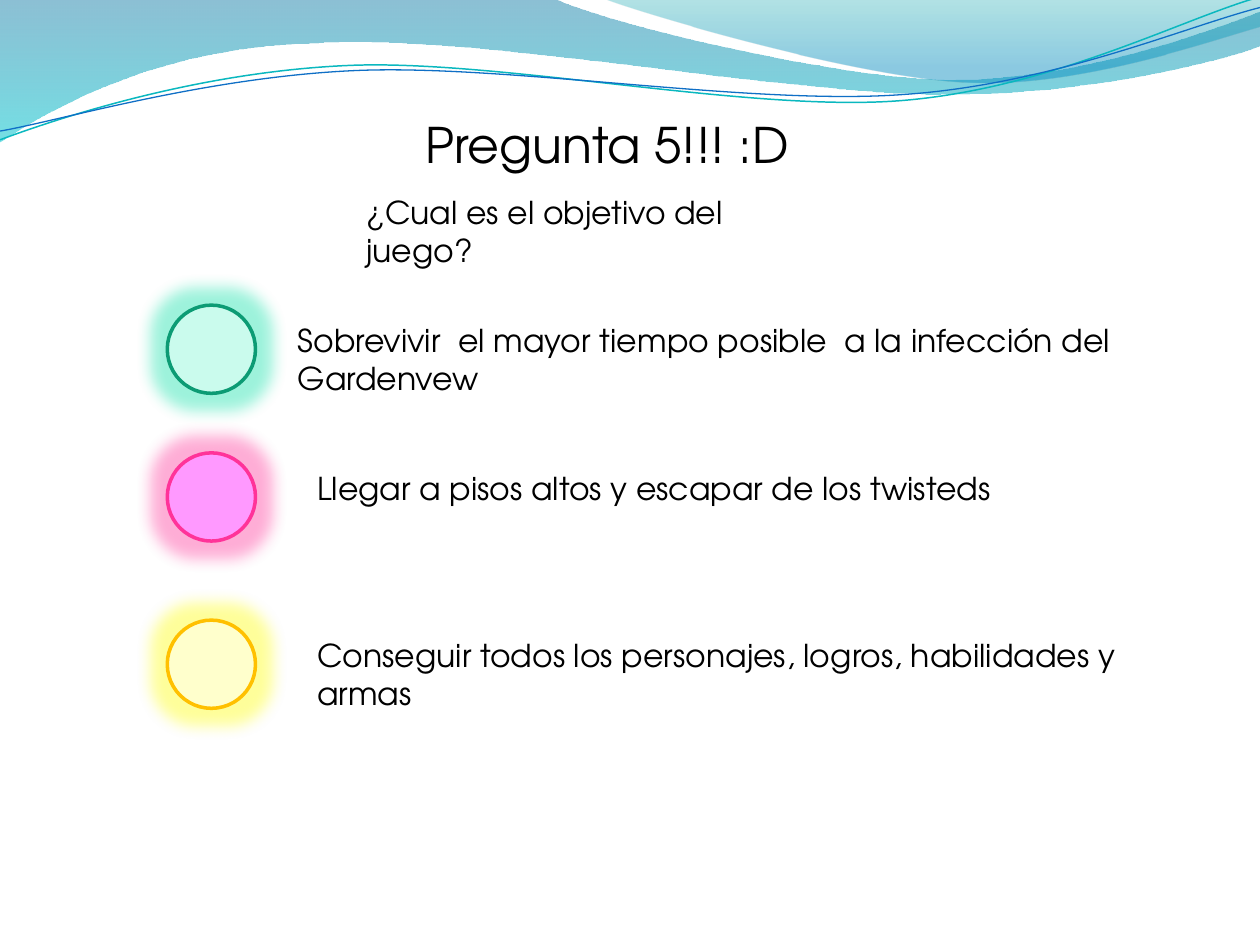
import math

from lxml import etree
from pptx import Presentation
from pptx import util as u
from pptx.dml.color import RGBColor
from pptx.enum import shapes, text
from pptx.oxml.ns import qn

FONT = "TeX Gyre Adventor"
TILT = 2.7

# Each outline is a start point, then line (2 numbers) or curve (6 numbers) parts
WAVE = [(0, 0), (316.8, -0.7), (342.7, 12.2, 478.1, 45.4, 545.8, 45.4),
        (614.2, 45.4, 689.8, 18.7, 720, 6.5), (720.7, 25.9),
        (707.8, 31.7, 626.4, 54.7, 537.1, 54), (447.8, 54, 275, 20.2, 185, 24.5),
        (92.9, 25.9, 33.1, 59.8, -0.7, 81.4), (0, 0)]
CREST = [(344.9, -0.7), (366.5, 7.9, 491, 44.6, 553.7, 46.8),
         (616.3, 49.7, 691.9, 23, 720, 15.1), (720, 0), (344.9, -0.7)]
TEAL = [(0, 79.9), (34.6, 67, 113.8, 41, 199.4, 37.4),
        (284.4, 33.8, 427, 64.1, 513.4, 57.6), (599.8, 51.1, 675.4, 10.8, 718.6, -1.4)]
BLUE = [(0, 74.9), (33.8, 69.1, 118.1, 43.9, 203.8, 40.3),
        (290.2, 36.7, 429.8, 60.5, 516.2, 54), (601.9, 48.2, 677.5, 15.1, 720, 4.3)]


def rgb(code):
    return RGBColor.from_string(code)


def add_alpha(node, pct):
    etree.SubElement(node, qn("a:alpha"), val=str(pct * 1000))


def spin(part, deg, mid):
    """Turn every point of one outline part about mid."""
    cos, sin = math.cos(math.radians(deg)), math.sin(math.radians(deg))
    out = []
    for x, y in zip(part[::2], part[1::2]):
        dx, dy = x - mid[0], y - mid[1]
        out += [mid[0] + dx * cos - dy * sin, mid[1] + dx * sin + dy * cos]
    return out


def add_form(slide, parts, close):
    parts = [[u.Pt(n) for n in part] for part in parts]
    form = slide.shapes.build_freeform(*parts[0])
    form.add_line_segments([part[-2:] for part in parts[1:]], close=close)
    shape = form.convert_to_shape()
    shape.shadow.inherit = False
    # Bend the straight segments that have control points
    for part, leg in zip(parts[1:], list(shape.element.spPr.iter(qn("a:lnTo")))):
        if len(part) == 6:
            bend = etree.Element(qn("a:cubicBezTo"))
            for x, y in zip(part[::2], part[1::2]):
                etree.SubElement(bend, qn("a:pt"), x=str(x - shape.left),
                                 y=str(y - shape.top))
            leg.getparent().replace(leg, bend)
    return shape


def add_wave(slide, parts, stops):
    shape = add_form(slide, parts, True)
    shape.line.fill.background()
    shape.fill.gradient()
    shape.fill.gradient_angle = 270
    for stop, (pos, code, _) in zip(shape.fill.gradient_stops, stops):
        stop.position = pos
        stop.color.rgb = rgb(code)
    nodes = list(shape.element.spPr.iter(qn("a:srgbClr")))
    for node, (_, _, pct) in zip(nodes, stops):
        add_alpha(node, pct)


def add_curve(slide, parts, mid, code, width):
    shape = add_form(slide, [spin(part, TILT, mid) for part in parts], False)
    shape.rotation = 360 - TILT
    shape.fill.background()
    shape.line.color.rgb = rgb(code)
    shape.line.width = u.Pt(width)


def add_dot(slide, top, fill, edge, glow):
    dot = slide.shapes.add_shape(shapes.MSO_SHAPE.OVAL, u.Pt(95.6), u.Pt(top),
                                 u.Pt(50.4), u.Pt(50.4))
    dot.shadow.inherit = False
    dot.fill.solid()
    dot.fill.fore_color.rgb = rgb(fill)
    dot.line.color.rgb = rgb(edge)
    dot.line.width = u.Pt(2)
    # Soft halo
    effects = dot.element.spPr.find(qn("a:effectLst"))
    halo = etree.SubElement(effects, qn("a:glow"), rad=str(u.Pt(18)))
    add_alpha(etree.SubElement(halo, qn("a:srgbClr"), val=glow), 40)


def add_text(slide, words, *, left, top, width, height, size=18, color="000000"):
    box = slide.shapes.add_textbox(u.Pt(left), u.Pt(top), u.Pt(width), u.Pt(height))
    frame = box.text_frame
    frame.word_wrap = True
    frame.auto_size = text.MSO_AUTO_SIZE.SHAPE_TO_FIT_TEXT
    run = frame.paragraphs[0].add_run()
    run.text = words
    run.font.name = FONT
    run.font.size = u.Pt(size)
    run.font.color.rgb = rgb(color)


def main():
    deck = Presentation()
    deck.slide_width, deck.slide_height = u.Pt(720), u.Pt(540)
    slide = deck.slides.add_slide(deck.slide_layouts[6])

    # Waves along the top
    add_wave(slide, WAVE, [(0, "0074A1", 45), (1, "00C6CF", 55)])
    add_wave(slide, CREST, [(0, "00A1A9", 30), (0.8, "008BBF", 45)])
    add_curve(slide, TEAL, (359.3, 41.4), "0AB8BF", 0.85)
    add_curve(slide, BLUE, (359.6, 42.5), "0F6FC6", 0.75)

    # Title and question
    add_text(slide, "Pregunta 5!!! :D", left=236.2, top=61.9, width=229, height=41, size=28)
    add_text(slide, "¿Cual es el objetivo del juego?", left=202.3, top=106.6,
             width=280.8, height=28.8)

    # Answer markers
    add_dot(slide, 174.4, "CAFBED", "0C9B74", "0AE1A7")
    add_dot(slide, 258.8, "FF99FF", "FF3399", "FF3399")
    add_dot(slide, 354.4, "FFFFCC", "FFC000", "FFFF00")

    # Answers
    add_text(slide, "Llegar a pisos altos y escapar de los twisteds",
             left=174.3, top=264.6, width=412.6, height=28.8)
    add_text(slide, "Sobrevivir  el mayor tiempo posible  a la infección del Gardenvew",
             left=163.1, top=180, width=528.5, height=51.1)
    add_text(slide, "Conseguir todos los personajes, logros, habilidades y armas",
             left=174.3, top=360, width=528.5, height=51.1)

    deck.save("out.pptx")


if __name__ == "__main__":
    main()
